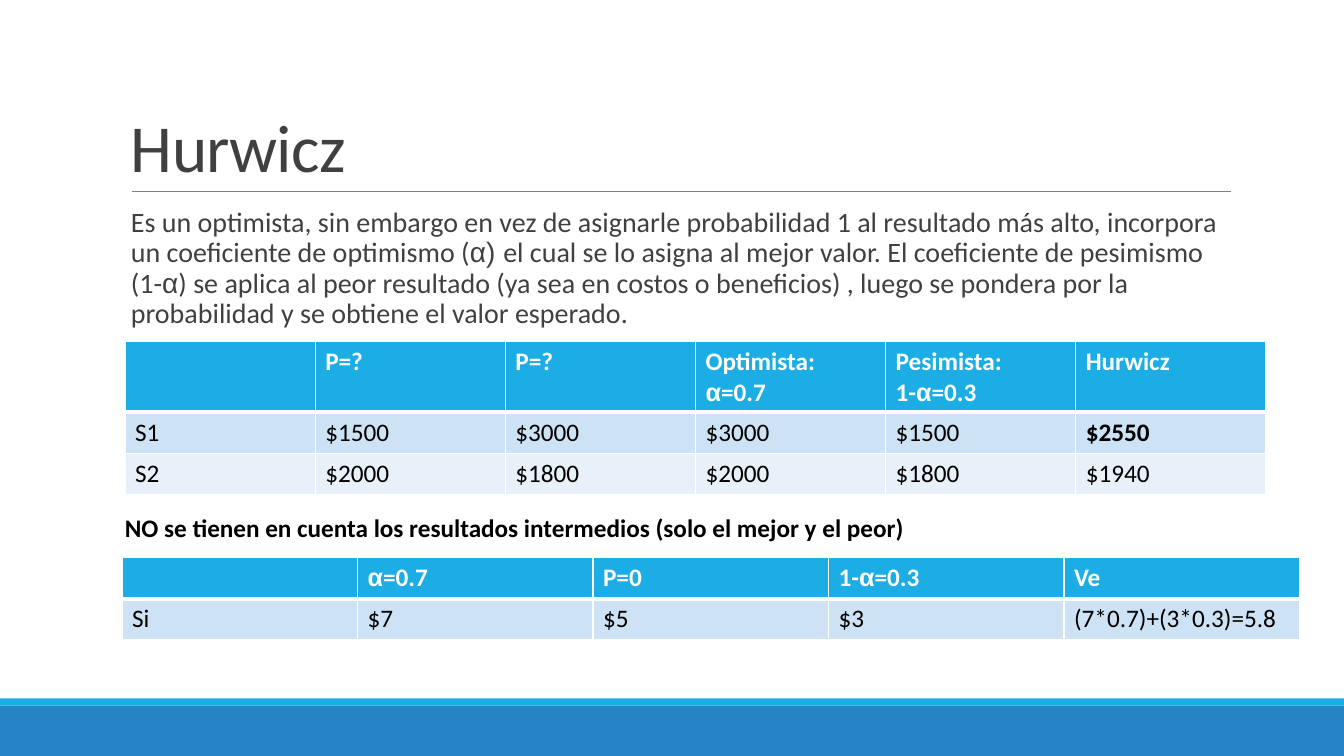
"""Build the Hurwicz criterion slide."""
from lxml.etree import SubElement
from pptx import Presentation
from pptx.dml.color import RGBColor
from pptx.enum.shapes import MSO_CONNECTOR, MSO_SHAPE
from pptx.enum.text import MSO_ANCHOR
from pptx.oxml.ns import qn
from pptx.util import Inches, Pt

COLORS = {
    "white": "FFFFFF",
    "black": "000000",
    "text": "404040",
    "rule": "808080",
    "blue": "2683C6",
    "cyan": "1CADE4",
    "band_dark": "CDE3F5",
    "band_light": "E8F1FA",
}
ALPHA = ("α", "Arial")
HEADER_HEIGHT = 0.41


def color(name):
    return RGBColor.from_string(COLORS[name])


class SlideBuilder:
    def __init__(self, page, font="Calibri"):
        self.page = page
        self.font = font

    def bar(self, top, height, fill):
        shape = self.page.shapes.add_shape(
            MSO_SHAPE.RECTANGLE, 0, Inches(top), Inches(13.33), Inches(height))
        shape.shadow.inherit = False
        shape.fill.solid()
        shape.fill.fore_color.rgb = color(fill)
        shape.line.fill.background()

    def rule(self, left, right, top):
        line = self.page.shapes.add_connector(
            MSO_CONNECTOR.STRAIGHT, Inches(left), Inches(top), Inches(right), Inches(top))
        line.line.color.rgb = color("rule")
        line.line.width = Pt(0.5)
        SubElement(line._element.spPr, qn("a:effectLst"))

    def spans(self, paragraph, spans, size, fill, bold=False, spacing=None):
        for item in spans:
            text, font = (item, self.font) if isinstance(item, str) else item
            span = paragraph.add_run()
            span.text = text
            span.font.name = font
            span.font.size = Pt(size)
            span.font.bold = bold
            span.font.color.rgb = color(fill)
            if spacing is not None:
                span._r.get_or_add_rPr().set("spc", str(spacing))

    def text(self, area, spans, size, fill, bold=False, spacing=None,
             anchor=MSO_ANCHOR.TOP, line_spacing=1.0, before=0):
        box = self.page.shapes.add_textbox(*map(Inches, area))
        frame = box.text_frame
        frame.word_wrap = True
        frame.vertical_anchor = anchor
        paragraph = frame.paragraphs[0]
        paragraph.line_spacing = line_spacing
        paragraph.space_before = Pt(before)
        self.spans(paragraph, spans, size, fill, bold, spacing)

    def borders(self, cell, row):
        widths = {"L": 1, "R": 1, "T": 3 if row == 1 else 1, "B": 3 if row == 0 else 1}
        properties = cell._tc.get_or_add_tcPr()
        for side, width in widths.items():
            line = SubElement(properties, qn(f"a:ln{side}"), w=str(Pt(width)))
            SubElement(SubElement(line, qn("a:solidFill")), qn("a:srgbClr"), val=COLORS["white"])

    def table(self, left, top, column_width, header_height, rows, bold_cells=()):
        heights = [header_height] + [0.41] * (len(rows) - 1)
        columns = len(rows[0])
        table = self.page.shapes.add_table(
            len(rows), columns, Inches(left), Inches(top),
            Inches(column_width * columns), Inches(sum(heights))).table
        for column in table.columns:
            column.width = Inches(column_width)
        for row, values in enumerate(rows):
            table.rows[row].height = Inches(heights[row])
            band = "cyan" if row == 0 else ("band_light", "band_dark")[row % 2]
            for column, value in enumerate(values):
                cell = table.cell(row, column)
                self.borders(cell, row)
                cell.fill.solid()
                cell.fill.fore_color.rgb = color(band)
                paragraphs = [[value]] if isinstance(value, str) else value
                for index, spans in enumerate(paragraphs):
                    frame = cell.text_frame
                    paragraph = frame.add_paragraph() if index else frame.paragraphs[0]
                    self.spans(paragraph, spans, 18, "black" if row else "white",
                               row == 0 or (row, column) in bold_cells)


def main():
    deck = Presentation()
    deck.slide_width, deck.slide_height = Inches(13.33), Inches(7.5)
    builder = SlideBuilder(deck.slides.add_slide(deck.slide_layouts[6]))

    builder.bar(7, 0.5, "blue")
    builder.bar(6.93, 0.07, "cyan")
    builder.rule(1.31, 12.21, 1.9)
    builder.text((1.2, 0.31, 11, 1.59), ["Hurwicz"], 48, "text", spacing=-50,
                 anchor=MSO_ANCHOR.BOTTOM, line_spacing=0.85)
    builder.text((1.2, 2.02, 11.1, 1.3), [
        "Es un optimista, sin embargo en vez de asignarle probabilidad 1 al resultado "
        "más alto, incorpora un coeficiente de optimismo (",
        ("α) ", "Arial"),
        "el cual se lo asigna al mejor valor. El coeficiente de pesimismo (1-",
        ALPHA,
        ") se aplica al peor resultado (ya sea en costos o beneficios) , luego se pondera "
        "por la probabilidad y se obtiene el valor esperado.",
    ], 20, "text", line_spacing=0.9, before=12)

    builder.table(1.24, 3.39, 1.886, 0.7, [
        ["", "P=?", "P=?", [["Optimista: ", ALPHA, "=0.7"]],
         [["Pesimista:"], ["1-", ALPHA, "=0.3"]], "Hurwicz"],
        ["S1", "$1500", "$3000", "$3000", "$1500", "$2550"],
        ["S2", "$2000", "$1800", "$2000", "$1800", "$1940"],
    ], bold_cells={(1, 5)})
    builder.text((1.14, 5.03, 11.17, 0.4),
                 ["NO se tienen en cuenta los resultados intermedios (solo el mejor y el peor)"],
                 18, "black", bold=True)
    builder.table(1.21, 5.53, 2.336, HEADER_HEIGHT, [
        ["", [[ALPHA, "=0.7"]], "P=0", [["1-", ALPHA, "=0.3"]], "Ve"],
        ["Si", "$7", "$5", "$3", "(7*0.7)+(3*0.3)=5.8"],
    ])
    deck.save("out.pptx")


if __name__ == "__main__":
    main()
